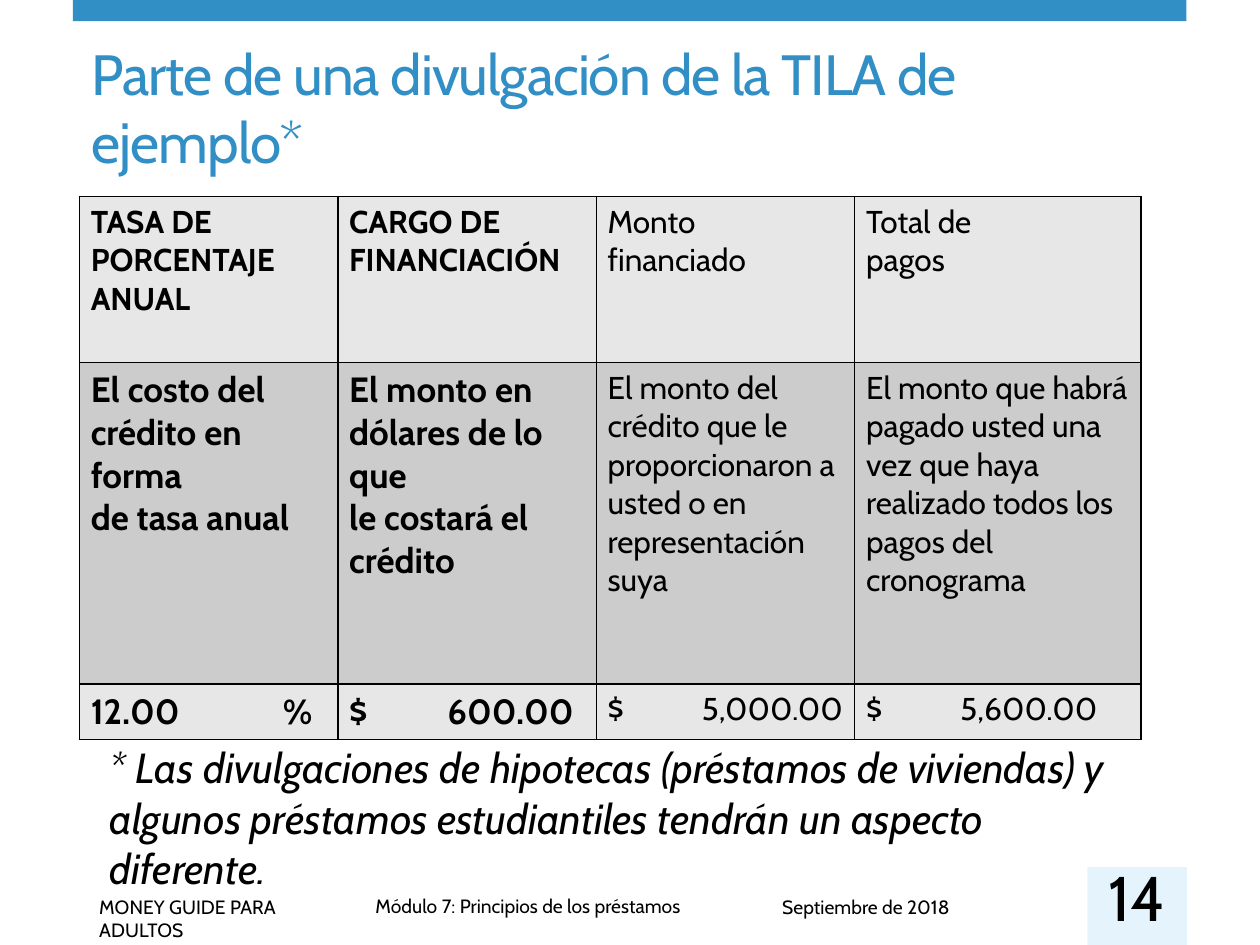
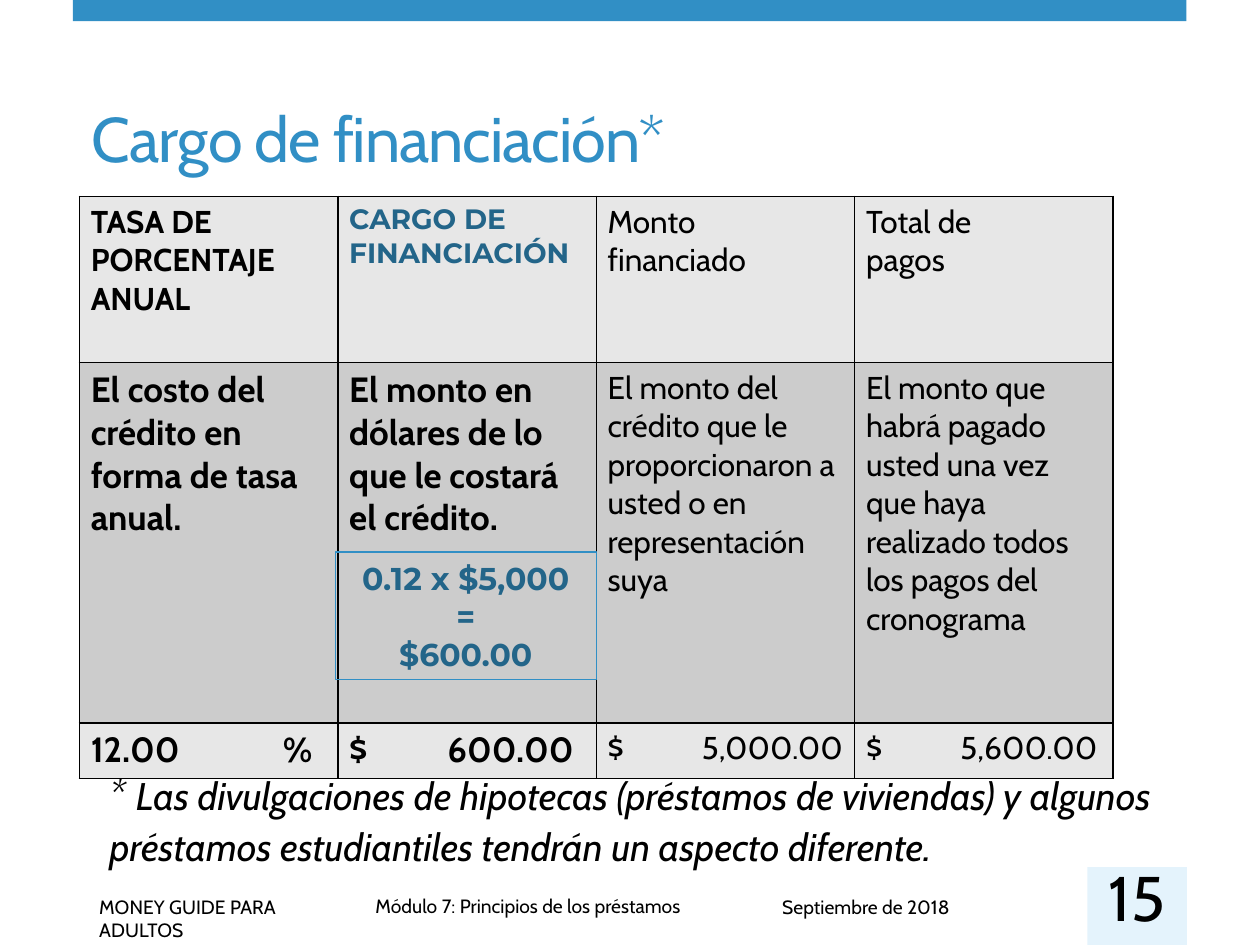
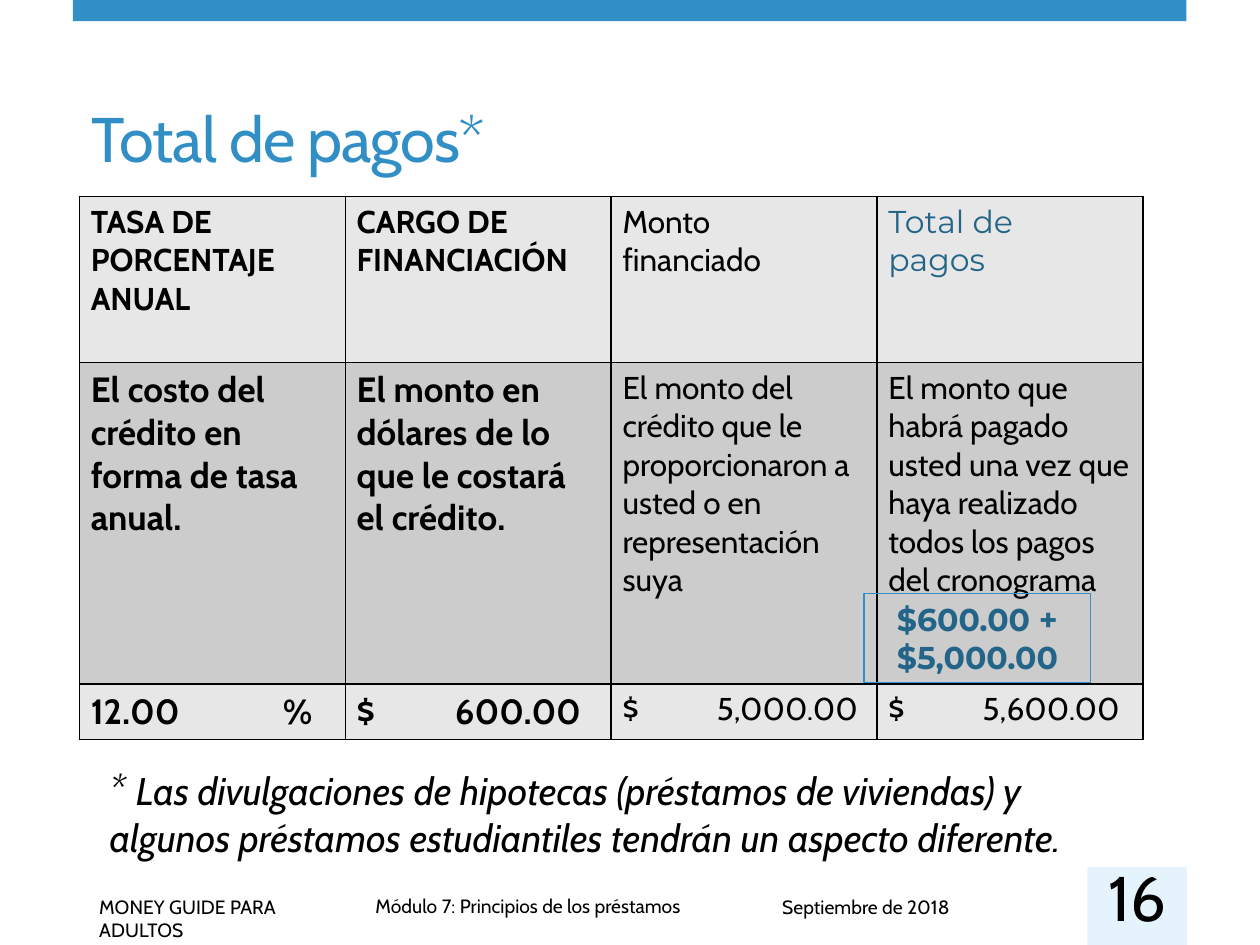
from lxml.etree import SubElement
from pptx import Presentation
from pptx.dml.color import RGBColor
from pptx.enum.shapes import MSO_SHAPE
from pptx.enum.text import MSO_ANCHOR, MSO_AUTO_SIZE, PP_ALIGN
from pptx.oxml.ns import qn
from pptx.util import Cm, Pt

COLORS = {
    "blue": "318FC5",
    "accent": "236589",
    "pale": "E4F3FC",
    "light_gray": "E7E7E7",
    "mid_gray": "CCCCCC",
    "black": "000000",
}
BODY_FONT = "Cabin"
ACCENT_FONT = "Montserrat"
ROW_FILLS = ("light_gray", "mid_gray", "light_gray")
VALUE_TABS = (3.87, 1.98, 1.9, 1.9)
HEADINGS = (
    "TASA DE PORCENTAJE ANUAL",
    "CARGO DE\nFINANCIACIÓN",
    "Monto\nfinanciado",
    "Total de\npagos",
)
COSTS = (
    "El costo del crédito en forma de tasa anual.",
    "El monto en dólares de lo que le costará el crédito.",
)
COSTS_BY_LINE = (
    "El costo del\ncrédito en forma\nde tasa anual",
    "El monto en dólares de lo que\nle costará el crédito",
)
AMOUNTS = (
    "El monto del crédito que le proporcionaron a usted o en representación suya",
    "El monto que habrá pagado usted una vez que haya realizado todos los pagos del cronograma",
)
VALUES = ("12.00\t%", "$\t600.00", "$\t5,000.00", "$\t5,600.00")
NOTE = (
    "Las divulgaciones de hipotecas (préstamos de viviendas) y algunos "
    "préstamos estudiantiles tendrán un aspecto diferente"
)
FOOTERS = (
    ("Módulo\u00a07: Principios de los préstamos", (7.32, 17.91, 14.38, 0.74)),
    ("MONEY GUIDE PARA ADULTOS", (1.75, 17.93, 5.31, 0.74)),
    ("Septiembre de 2018", (15.52, 17.93, 6.4, 0.74)),
)
SLIDES = (
    {
        "number": 14,
        "title": "Parte de una divulgación de la TILA de ejemplo*",
        "title_size": 32.4,
        "columns": (5.21, 5.21, 5.21, 5.77),
        "rows": (3.35, 6.48, 1.12),
        "costs": COSTS_BY_LINE,
        "note_box": (1.96, 14.83, 20.73, 3.33),
        "note_runs": (("* " + NOTE + ".", 24),),
    },
    {
        "number": 15,
        "title": "Cargo de financiación*",
        "columns": (5.21,) * 4,
        "rows": (3.35, 7.26, 1.12),
        "accent_column": 1,
        "accent_size": 16,
        "formula": "0.12 x $5,000\n=\n$600.00",
        "formula_box": (6.76, 11.13, 5.26, 2.57),
        "note_box": (1.96, 15.37, 21.84, 2.31),
        "note_runs": (("* ", 24), (NOTE, 22), (".", 24)),
    },
    {
        "number": 16,
        "title": "Total de pagos*",
        "columns": (5.36,) * 4,
        "rows": (3.35, 6.48, 1.12),
        "accent_column": 3,
        "formula": "$600.00 +\n$5,000.00",
        "formula_box": (17.42, 11.96, 4.57, 1.8),
        "note_box": (1.96, 15.27, 21.29, 2.24),
        "note_runs": (("* ", 24), (NOTE + ".", 22)),
    },
)


def rgb(color):
    return RGBColor.from_string(COLORS[color])


def lengths(box):
    return tuple(Cm(value) for value in box)


def add_text(paragraph, text, size, color="black", font=BODY_FONT, bold=False, italic=False):
    for index, line in enumerate(text.split("\n")):
        if index:
            paragraph.add_line_break()
        run = paragraph.add_run()
        run.text = line
        run.font.size = Pt(size)
        run.font.name = font
        run.font.bold = bold
        run.font.italic = italic
        run.font.color.rgb = rgb(color)
    return run


def add_box(slide, box):
    frame = slide.shapes.add_textbox(*lengths(box)).text_frame
    frame.word_wrap = True
    return frame


def add_rectangle(slide, box, fill=None, line=None):
    rectangle = slide.shapes.add_shape(MSO_SHAPE.RECTANGLE, *lengths(box))
    rectangle.shadow.inherit = False
    if fill:
        rectangle.fill.solid()
        rectangle.fill.fore_color.rgb = rgb(fill)
    else:
        rectangle.fill.background()
    if line:
        rectangle.line.color.rgb = rgb(line)
        rectangle.line.width = Pt(0.75)
    else:
        rectangle.line.fill.background()
    return rectangle


def draw_frame(slide, number):
    add_rectangle(slide, (1.47, 0, 22.45, 0.43), "blue")
    for text, box in FOOTERS:
        add_text(add_box(slide, box).paragraphs[0], text, 11)
    left, top, width, height = 21.92, 17.48, 2.01, 1.57
    add_rectangle(slide, (left, top, width, height), "pale")
    page = add_box(slide, (left, top + 0.2, width, height / 2))
    page.margin_left = page.margin_right = page.margin_top = page.margin_bottom = 0
    page.vertical_anchor = MSO_ANCHOR.MIDDLE
    page.paragraphs[0].alignment = PP_ALIGN.CENTER
    add_text(page.paragraphs[0], str(number), 36)


def draw_title(slide, text, size, box):
    title = slide.shapes.title
    title.left, title.top, title.width, title.height = lengths(box)
    frame = title.text_frame
    frame.word_wrap = True
    frame.auto_size = MSO_AUTO_SIZE.NONE
    frame.vertical_anchor = MSO_ANCHOR.BOTTOM
    frame.paragraphs[0].alignment = PP_ALIGN.LEFT
    run = add_text(frame.paragraphs[0], text, size, "blue")
    run._r.get_or_add_rPr().set("spc", "-60")


def set_borders(cell):
    properties = cell._tc.get_or_add_tcPr()
    for side in ("lnL", "lnR", "lnT", "lnB"):
        border = SubElement(properties, qn("a:" + side), w=str(Pt(1)))
        fill = SubElement(border, qn("a:solidFill"))
        SubElement(fill, qn("a:srgbClr"), val=COLORS["black"])


def set_tab(paragraph, position):
    tabs = SubElement(paragraph._p.get_or_add_pPr(), qn("a:tabLst"))
    SubElement(tabs, qn("a:tab"), pos=str(Cm(position)), algn="l")


def draw_disclosure(slide, content, left, top):
    columns, rows = content["columns"], content["rows"]
    box = lengths((left, top, sum(columns), sum(rows)))
    table = slide.shapes.add_table(len(rows), len(columns), *box).table
    table.first_row = table.horz_banding = False
    for column, width in zip(table.columns, columns):
        column.width = Cm(width)
    for row, height in zip(table.rows, rows):
        row.height = Cm(height)
    texts = (HEADINGS, content.get("costs", COSTS) + AMOUNTS, VALUES)
    for row, row_texts in enumerate(texts):
        for column, text in enumerate(row_texts):
            cell = table.cell(row, column)
            cell.margin_left = cell.margin_right = Cm(0.23)
            set_borders(cell)
            cell.fill.solid()
            cell.fill.fore_color.rgb = rgb(ROW_FILLS[row])
            paragraph = cell.text_frame.paragraphs[0]
            if texts[row] is VALUES:
                set_tab(paragraph, VALUE_TABS[column])
            bold = column < 2
            size = 20 if bold and row else 18
            if row == 0 and column == content.get("accent_column"):
                size = content.get("accent_size", size)
                add_text(paragraph, text, size, "accent", ACCENT_FONT, bold)
            else:
                add_text(paragraph, text, size, bold=bold)


def draw_formula(slide, text, box):
    frame = add_rectangle(slide, box, line="blue").text_frame
    frame.word_wrap = True
    frame.vertical_anchor = MSO_ANCHOR.MIDDLE
    frame.paragraphs[0].alignment = PP_ALIGN.CENTER
    add_text(frame.paragraphs[0], text, 18, "accent", ACCENT_FONT, bold=True)


def draw_note(slide, runs, box):
    paragraph = add_box(slide, box).paragraphs[0]
    for text, size in runs:
        add_text(paragraph, text, size, italic=True)


def build_slide(deck, content):
    slide = deck.slides.add_slide(deck.slide_layouts[5])
    draw_frame(slide, content["number"])
    draw_title(slide, content["title"], content.get("title_size", 36), (1.6, 1.22, 20.83, 2.44))
    draw_disclosure(slide, content, 1.6, 3.96)
    if "formula" in content:
        draw_formula(slide, content["formula"], content["formula_box"])
    draw_note(slide, content["note_runs"], content["note_box"])


def main():
    deck = Presentation()
    deck.slide_width, deck.slide_height = Cm(25.4), Cm(19.05)
    for content in SLIDES:
        build_slide(deck, content)
    deck.save("out.pptx")


if __name__ == "__main__":
    main()
